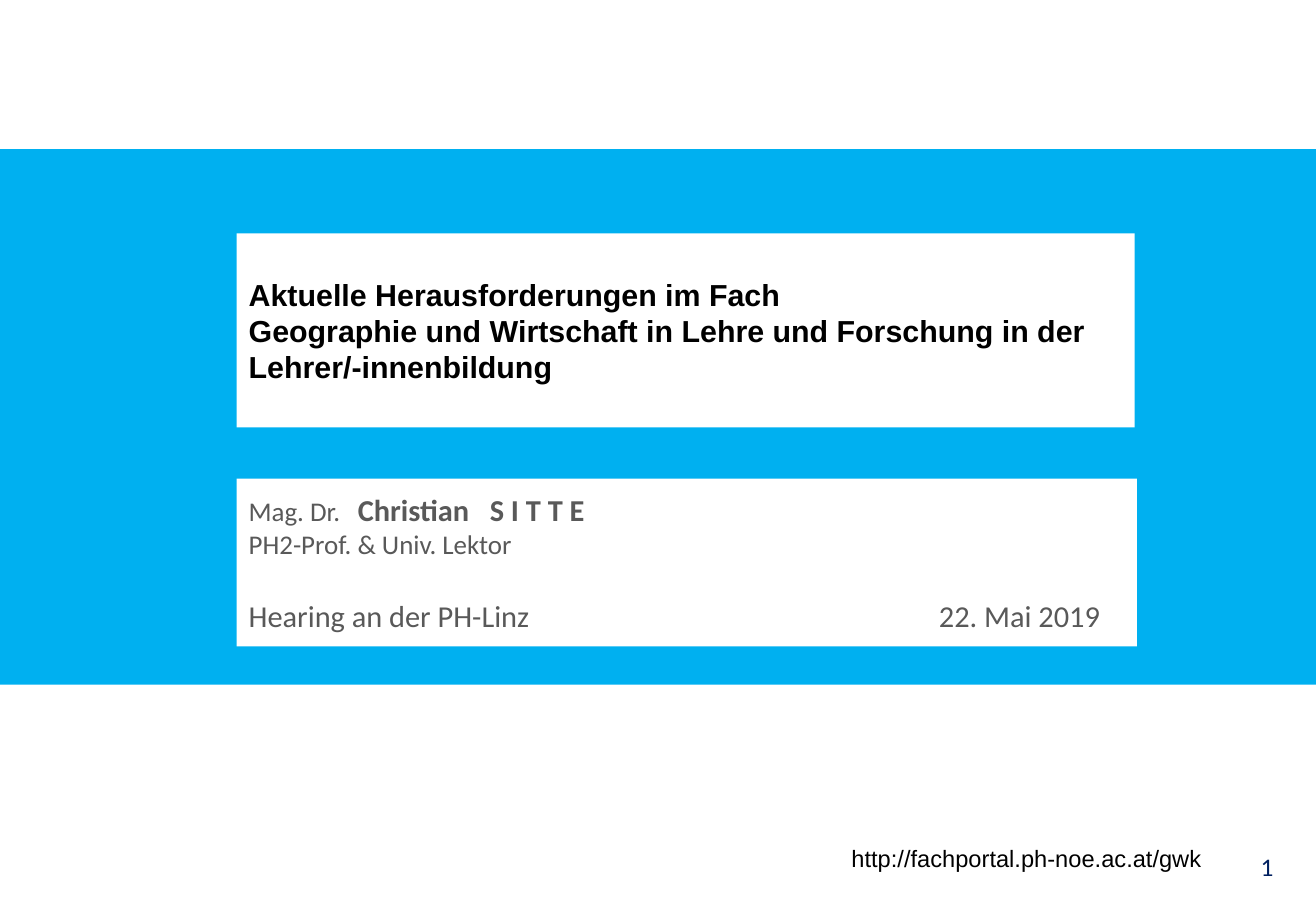
import pptx
import pptx.dml.color
import pptx.enum.shapes
import pptx.enum.text
import pptx.oxml
import pptx.oxml.ns
import pptx.util
from pptx.util import Cm

RGB = pptx.dml.color.RGBColor
BLUE = RGB(0x00, 0xB0, 0xF0)
WHITE = RGB(0xFF, 0xFF, 0xFF)
BLACK = RGB(0x00, 0x00, 0x00)
GREY = RGB(0x59, 0x59, 0x59)
NAVY = RGB(0x00, 0x20, 0x60)
ALIGN = pptx.enum.text.PP_ALIGN
ANCHOR = pptx.enum.text.MSO_ANCHOR

# Text formats
TITLE = dict(name="Arial", size=18, bold=True, color=BLACK)
SMALL = dict(name="Calibri", size=16, bold=False, color=GREY)
LARGE = dict(SMALL, size=18)
NAME = dict(LARGE, bold=True)
LINK = dict(name="Arial", size=14, color=BLACK)
PAGE = dict(name="Calibri", size=15, color=NAVY)


def style(font, look):
    for key, val in look.items():
        if key == "color":
            font.color.rgb = val
        else:
            setattr(font, key, pptx.util.Pt(val) if key == "size" else val)


def add_tabs(par, tabs):
    """Set tab stops, given as (position in cm, alignment) pairs."""
    props = par._p.get_or_add_pPr()
    ns = pptx.oxml.ns.nsdecls("a")
    stops = "".join(f'<a:tab pos="{Cm(pos)}" algn="{side}"/>'
                    for pos, side in tabs)
    props.append(pptx.oxml.parse_xml(f"<a:tabLst {ns}>{stops}</a:tabLst>"))


def write(frame, lines, align=ALIGN.LEFT, anchor=ANCHOR.TOP):
    """Fill a frame; each line is (runs, tabs, space before in points)."""
    frame.word_wrap = True
    frame.vertical_anchor = anchor
    for i, (runs, tabs, gap) in enumerate(lines):
        par = frame.add_paragraph() if i else frame.paragraphs[0]
        par.alignment = align
        if gap:
            par.space_before = pptx.util.Pt(gap)
        if tabs:
            add_tabs(par, tabs)
        for text, look in runs:
            for j, part in enumerate(text.split("\n")):
                if j:
                    par.add_line_break()
                run = par.add_run()
                run.text = part
                style(run.font, look)


def add_box(slide, area, fill, lines=()):
    box = slide.shapes.add_shape(
        pptx.enum.shapes.MSO_SHAPE.RECTANGLE, *map(Cm, area))
    box.shadow.inherit = False
    box.fill.solid()
    box.fill.fore_color.rgb = fill
    box.line.fill.background()
    write(box.text_frame, lines, anchor=ANCHOR.MIDDLE)


def add_label(slide, area, text, look, align=ALIGN.LEFT):
    label = slide.shapes.add_textbox(*map(Cm, area))
    write(label.text_frame, [([(text, look)], (), 0)], align)


def main():
    deck = pptx.Presentation()
    deck.slide_width, deck.slide_height = Cm(27.51), Cm(19.05)
    slide = deck.slides.add_slide(deck.slide_layouts[6])

    # Blue band
    add_box(slide, (0, 3.12, 27.51, 11.2), BLUE)

    # Title
    title = ("Aktuelle Herausforderungen im Fach\n"
             "Geographie und Wirtschaft in Lehre und Forschung in der\n"
             "Lehrer/-innenbildung")
    add_box(slide, (4.95, 4.88, 18.77, 4.06), WHITE,
            [([(title, TITLE)], (), 0)])

    # Speaker, occasion and date
    add_box(slide, (4.95, 10.01, 18.82, 3.51), WHITE, [
        ([("Mag. Dr.\t", SMALL), ("Christian\tS I T T E", NAME)],
         [(2.28, "l"), (5.04, "l")], 0),
        ([("PH2-Prof. & Univ. Lektor", SMALL)], (), 0),
        ([("Hearing an der PH-Linz\t22. Mai 2019", LARGE)],
         [(17.8, "r")], 22),
    ])

    # Footer
    add_label(slide, (17.55, 17.53, 8, 0.86),
              "http://fachportal.ph-noe.ac.at/gwk", LINK)
    add_label(slide, (19.35, 17.68, 7.52, 0.89), "1", PAGE, ALIGN.RIGHT)

    deck.save("out.pptx")


if __name__ == "__main__":
    main()
